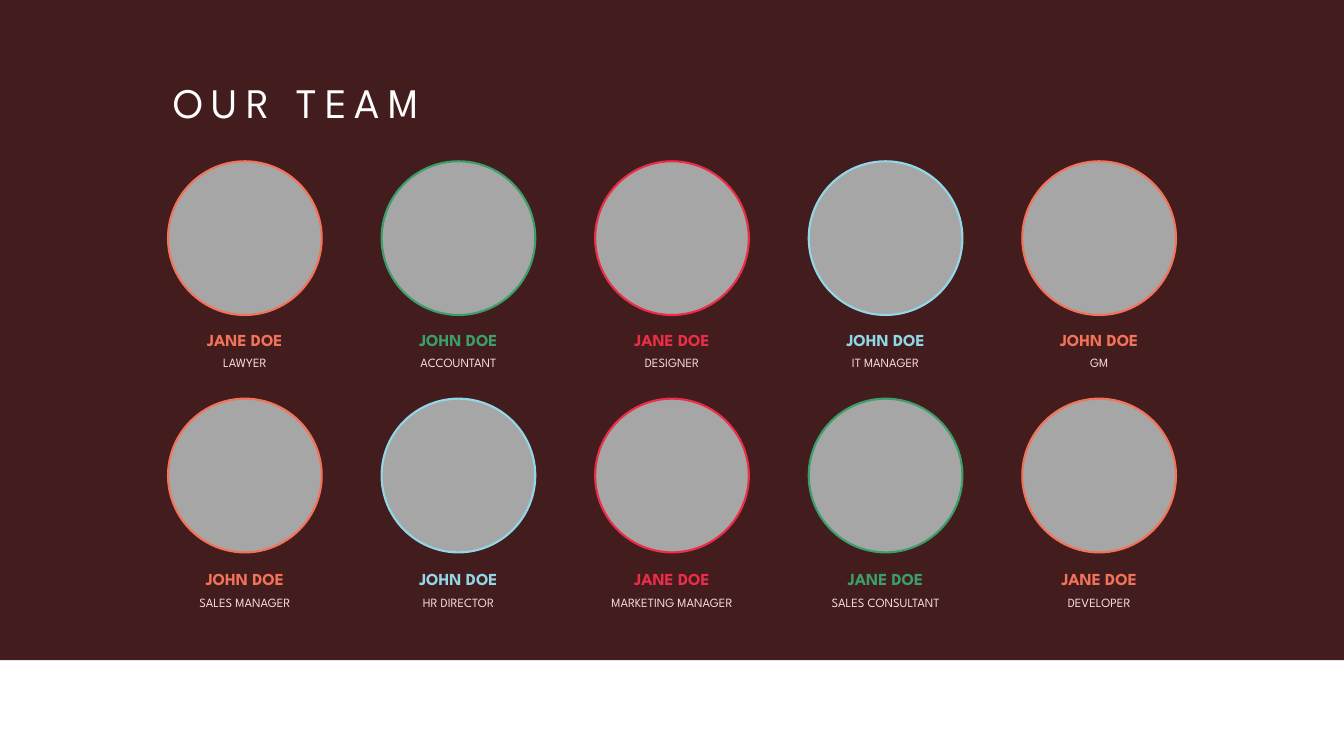
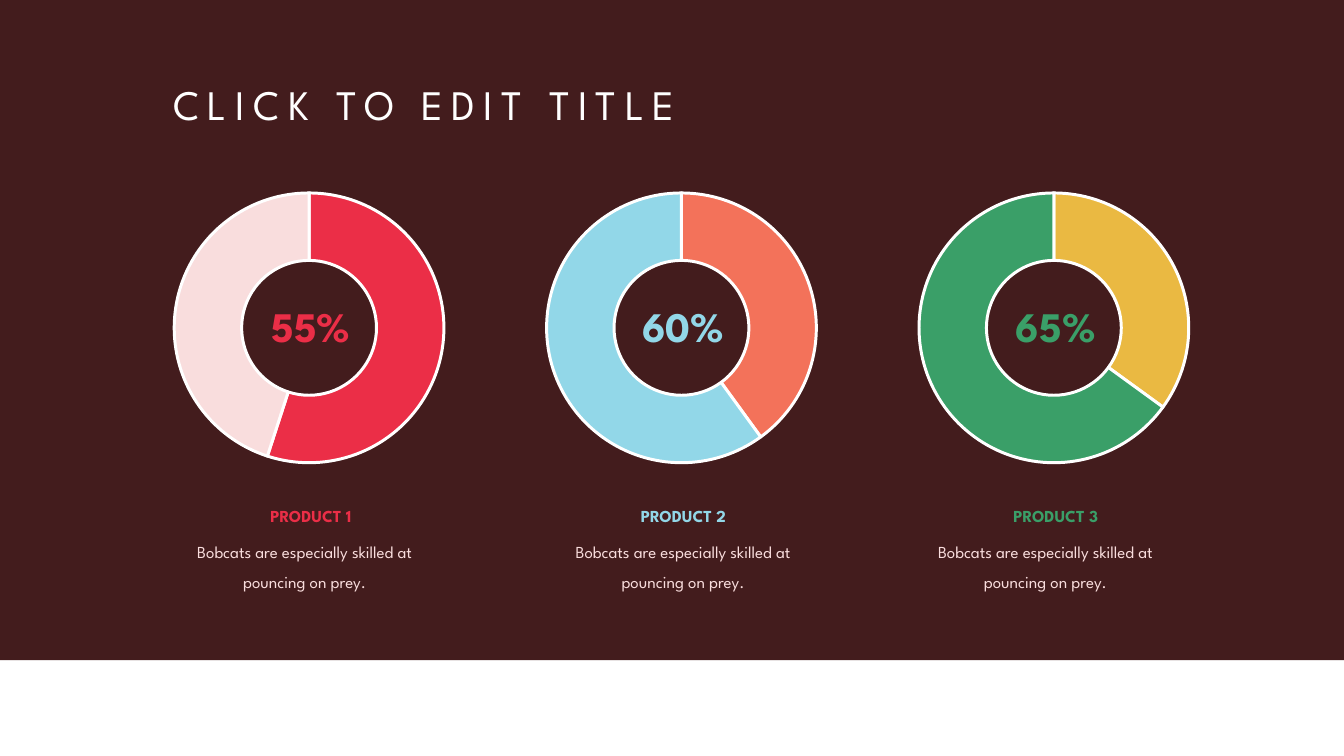
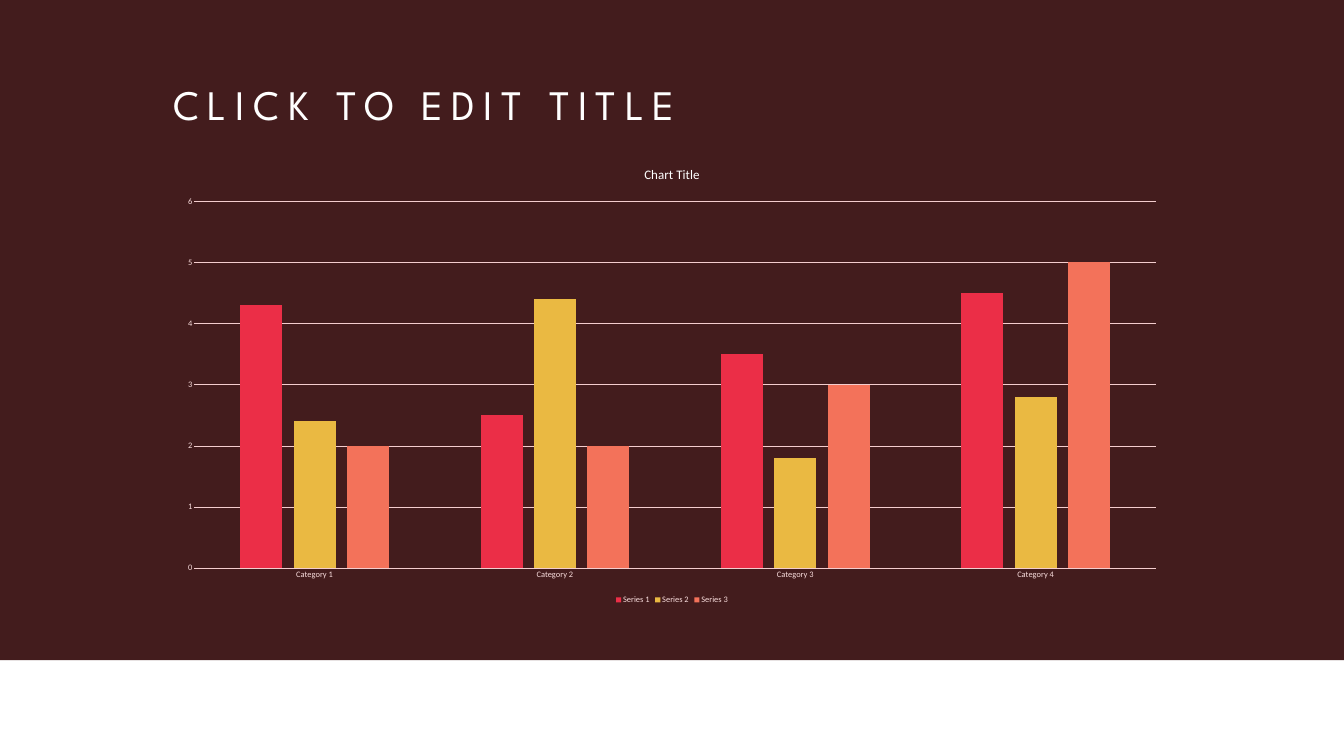
from dataclasses import dataclass

from pptx import Presentation
from pptx.chart.data import CategoryChartData
from pptx.dml.color import RGBColor
from pptx.enum.chart import XL_CHART_TYPE, XL_LEGEND_POSITION, XL_TICK_MARK
from pptx.enum.shapes import MSO_SHAPE
from pptx.enum.text import MSO_ANCHOR, MSO_AUTO_SIZE, PP_ALIGN
from pptx.oxml import parse_xml
from pptx.oxml.ns import nsdecls, qn
from pptx.util import Inches, Pt

RECTANGLE, OVAL = MSO_SHAPE.RECTANGLE, MSO_SHAPE.OVAL
DOUGHNUT, COLUMNS = XL_CHART_TYPE.DOUGHNUT, XL_CHART_TYPE.COLUMN_CLUSTERED
BOTTOM, NO_TICK = XL_LEGEND_POSITION.BOTTOM, XL_TICK_MARK.NONE
LEFT, CENTER, MIDDLE = PP_ALIGN.LEFT, PP_ALIGN.CENTER, MSO_ANCHOR.MIDDLE
NO_FIT, GROW = MSO_AUTO_SIZE.NONE, MSO_AUTO_SIZE.SHAPE_TO_FIT_TEXT

WIDTH, HEIGHT = 26.67, 15.0
MARGIN, CONTENT_WIDTH = WIDTH / 8, WIDTH * 3 / 4
BAND_HEIGHT = 13.1
FONT, CHART_FONT, NUMBER_FONT = "League Spartan", "Calibri", "Open Sans"

MAROON, WHITE, GRAY = "431C1D", "FFFFFF", "A6A6A6"
CORAL, GREEN, RED, SKY, GOLD = "F3725A", "3A9F68", "EB2E47", "92D7E8", "EAB942"
BLUSH, GRID_PINK, DEEP_RED = "F9DDDD", "F4CDCE", "501214"


@dataclass(frozen=True)
class Grid:
    left: float
    top: float
    column_pitch: float
    row_pitch: float = 0

    def x(self, column: int) -> float:
        return self.left + column * self.column_pitch

    def y(self, row: int) -> float:
        return self.top + row * self.row_pitch


@dataclass(frozen=True)
class Person:
    name: str
    role: str
    color: str
    role_width: float


@dataclass(frozen=True)
class Product:
    name: str
    percent: str
    color: str
    values: tuple
    slice_colors: tuple
    caption_left: float


PORTRAIT = 3.05
PORTRAITS = Grid(MARGIN, 3.2, (CONTENT_WIDTH - PORTRAIT) / 4, 4.71)
NAMES = Grid(MARGIN + PORTRAIT / 2, 6.49, PORTRAITS.column_pitch, 4.75)
NAME_WIDTHS = {"JANE DOE": 1.79, "JOHN DOE": 1.87}
TEAM = (
    (
        Person("JANE DOE", "LAWYER", CORAL, 1.27),
        Person("JOHN DOE", "ACCOUNTANT", GREEN, 1.96),
        Person("JANE DOE", "DESIGNER", RED, 1.44),
        Person("JOHN DOE", "IT MANAGER", SKY, 1.75),
        Person("JOHN DOE", "GM", CORAL, 0.62),
    ),
    (
        Person("JOHN DOE", "SALES MANAGER", CORAL, 2.32),
        Person("JOHN DOE", "HR DIRECTOR", SKY, 1.89),
        Person("JANE DOE", "MARKETING MANAGER", RED, 2.98),
        Person("JANE DOE", "SALES CONSULTANT", GREEN, 2.74),
        Person("JANE DOE", "DEVELOPER", CORAL, 1.67),
    ),
)

DOUGHNUTS = Grid(1.65, 3.76, 7.39)
DOUGHNUT_WIDTH, DOUGHNUT_HEIGHT = 8.63, 5.75
RING_CENTER = 4.52
CAPTION = "Bobcats are especially skilled at pouncing on prey."
PRODUCTS = (
    Product("PRODUCT 1", "55%", RED, (55, 45), (RED, BLUSH), 3.55),
    Product("PRODUCT 2", "60%", SKY, (40, 60), (CORAL, SKY), 11.06),
    Product("PRODUCT 3", "65%", GREEN, (35, 65), (GOLD, GREEN), 18.25),
)

CATEGORIES = ("Category 1", "Category 2", "Category 3", "Category 4")
SERIES = (
    ("Series 1", (4.3, 2.5, 3.5, 4.5), RED),
    ("Series 2", (2.4, 4.4, 1.8, 2.8), GOLD),
    ("Series 3", (2, 2, 3, 5), CORAL),
)


def rgb(color: str) -> RGBColor:
    return RGBColor.from_string(color)


def box(left: float, top: float, width: float, height: float) -> tuple:
    return Inches(left), Inches(top), Inches(width), Inches(height)


def set_fill(item, color: str) -> None:
    item.format.fill.solid()
    item.format.fill.fore_color.rgb = rgb(color)


def set_line(line, color: str, points: float) -> None:
    line.color.rgb = rgb(color)
    line.width = Pt(points)


def set_font(font, size: float, color: str, name: str = FONT, bold: bool = False) -> None:
    font.name, font.size, font.bold = name, Pt(size), bold
    font.color.rgb = rgb(color)


def add_plain_shape(slide, kind, area: tuple, color: str):
    shape = slide.shapes.add_shape(kind, *area)
    shape.shadow.inherit = False
    shape.fill.solid()
    shape.fill.fore_color.rgb = rgb(color)
    shape.line.fill.background()
    return shape


def add_text(slide, text: str, center: float, top: float, width: float, height: float,
             size: float, color: str, bold: bool = False, wrap: bool = False,
             spacing: float | None = None) -> None:
    """Add a centred text box around a horizontal centre."""
    frame = slide.shapes.add_textbox(*box(center - width / 2, top, width, height)).text_frame
    frame.word_wrap, frame.auto_size = wrap, GROW
    paragraph = frame.paragraphs[0]
    paragraph.text = text
    paragraph.alignment = CENTER
    paragraph.line_spacing = spacing
    set_font(paragraph.font, size, color, bold=bold)


def add_band(presentation, layout) -> None:
    """Put the dark band behind everything on the shared layout."""
    slide = presentation.slides[0]
    band = add_plain_shape(slide, RECTANGLE, box(0, 0, WIDTH, BAND_HEIGHT), MAROON)
    layout.shapes._spTree.insert(2, band._element)


def add_titled_slide(presentation, layout, text: str, area: tuple,
                     spacing: float | None = None):
    slide = presentation.slides.add_slide(layout)
    title = slide.shapes.title
    title.left, title.top, title.width, title.height = area
    frame = title.text_frame
    frame.text = text
    frame.word_wrap, frame.auto_size, frame.vertical_anchor = True, NO_FIT, MIDDLE
    paragraph = frame.paragraphs[0]
    paragraph.alignment = LEFT
    paragraph.line_spacing = spacing
    set_font(paragraph.font, 60, WHITE)
    paragraph.runs[0]._r.get_or_add_rPr().set("spc", "1200")
    return slide


def add_chart(slide, kind, area: tuple, categories: tuple, series: tuple):
    data = CategoryChartData()
    data.categories = categories
    for name, values in series:
        data.add_series(name, values)
    return slide.shapes.add_chart(kind, *area, data).chart


def set_plot_area(chart, x: float, y: float, width: float, height: float) -> None:
    """Fix the inner plot area, in shares of the chart's size."""
    plot_area = chart._chartSpace.chart.plotArea
    for layout in plot_area.findall(qn("c:layout")):
        plot_area.remove(layout)
    sizes = "".join(f'<c:{tag} val="{value}"/>' for tag, value in
                    (("x", x), ("y", y), ("w", width), ("h", height)))
    plot_area.insert(0, parse_xml(
        f'<c:layout {nsdecls("c")}><c:manualLayout><c:layoutTarget val="inner"/>'
        f'<c:xMode val="edge"/><c:yMode val="edge"/>{sizes}</c:manualLayout></c:layout>'))


def add_doughnut(slide, product: Product, left: float) -> None:
    area = box(left, DOUGHNUTS.top, DOUGHNUT_WIDTH, DOUGHNUT_HEIGHT)
    chart = add_chart(slide, DOUGHNUT, area, ("1", "2"), (("Series 1", product.values),))
    chart.has_title = chart.has_legend = False
    set_font(chart.font, 54, WHITE, NUMBER_FONT)
    set_plot_area(chart, 0.039, 0.012, 0.961, 0.931)
    chart._chartSpace.find(".//" + qn("c:holeSize")).set("val", "64")
    series = chart.plots[0].series[0]
    set_line(series.format.line, WHITE, 4.25)
    for index, color in enumerate(product.slice_colors):
        point = series.points[index]
        set_fill(point, color)
        set_line(point.format.line, WHITE, 4.25)


def fill_team_slide(slide) -> None:
    for row, people in enumerate(TEAM):
        for column, person in enumerate(people):
            area = box(PORTRAITS.x(column), PORTRAITS.y(row), PORTRAIT, PORTRAIT)
            portrait = add_plain_shape(slide, OVAL, area, GRAY)
            set_line(portrait.line, person.color, 3)
            center, top = NAMES.x(column), NAMES.y(row)
            add_text(slide, person.name, center, top, NAME_WIDTHS[person.name], 0.5,
                     24, person.color, bold=True)
            add_text(slide, person.role, center, top + 0.51, person.role_width, 0.4, 18, BLUSH)


def fill_product_slide(slide) -> None:
    caption_width = 4.99
    for column, product in enumerate(PRODUCTS):
        left = DOUGHNUTS.x(column)
        center = left + RING_CENTER
        add_doughnut(slide, product, left)
        add_text(slide, product.percent, center, 5.92, 1.99, 1.11, 60, product.color, bold=True)
        add_text(slide, product.name, center, 9.99, 2.15, 0.5, 24, product.color, bold=True)
        add_text(slide, CAPTION, product.caption_left + caption_width / 2, 10.5,
                 caption_width, 1.26, 24, BLUSH, wrap=True, spacing=1.5)


def fill_column_slide(slide) -> None:
    chart = add_chart(slide, COLUMNS, box(MARGIN, 3, CONTENT_WIDTH, 9.04), CATEGORIES,
                      tuple((name, values) for name, values, _ in SERIES))
    set_font(chart.font, 10, DEEP_RED, CHART_FONT)
    chart.has_title = True
    chart.chart_title.include_in_layout = False
    heading = chart.chart_title.text_frame
    heading.text = "Chart Title"
    set_font(heading.paragraphs[0].font, 18.6, WHITE, CHART_FONT)
    chart.has_legend = True
    chart.legend.position, chart.legend.include_in_layout = BOTTOM, False
    set_font(chart.legend.font, 12, BLUSH, CHART_FONT)

    plot = chart.plots[0]
    plot.gap_width, plot.overlap, plot.vary_by_categories = 219, -27, False
    for series, (_, _, color) in zip(plot.series, SERIES):
        set_fill(series, color)

    category_axis, value_axis = chart.category_axis, chart.value_axis
    for axis in (category_axis, value_axis):
        axis.major_tick_mark = axis.minor_tick_mark = NO_TICK
        set_font(axis.tick_labels.font, 12, BLUSH, CHART_FONT)
    set_line(category_axis.format.line, GRID_PINK, 0.75)
    value_axis.format.line.fill.background()
    value_axis.minimum_scale, value_axis.maximum_scale, value_axis.major_unit = 0, 6, 1
    value_axis.has_major_gridlines = True
    set_line(value_axis.major_gridlines.format.line, GRID_PINK, 0.75)


def main() -> None:
    presentation = Presentation()
    presentation.slide_width, presentation.slide_height = Inches(WIDTH), Inches(HEIGHT)
    layout = presentation.slide_layouts.get_by_name("Title Only")
    title_area = box(MARGIN, 1.5, CONTENT_WIDTH, 1.25)

    team_slide = add_titled_slide(presentation, layout, "OUR TEAM", box(MARGIN, 1.47, 14.02, 1.11))
    add_band(presentation, layout)
    fill_team_slide(team_slide)
    for fill_slide in (fill_product_slide, fill_column_slide):
        fill_slide(add_titled_slide(presentation, layout, "CLICK TO EDIT TITLE", title_area, 0.9))
    presentation.save("out.pptx")


if __name__ == "__main__":
    main()
